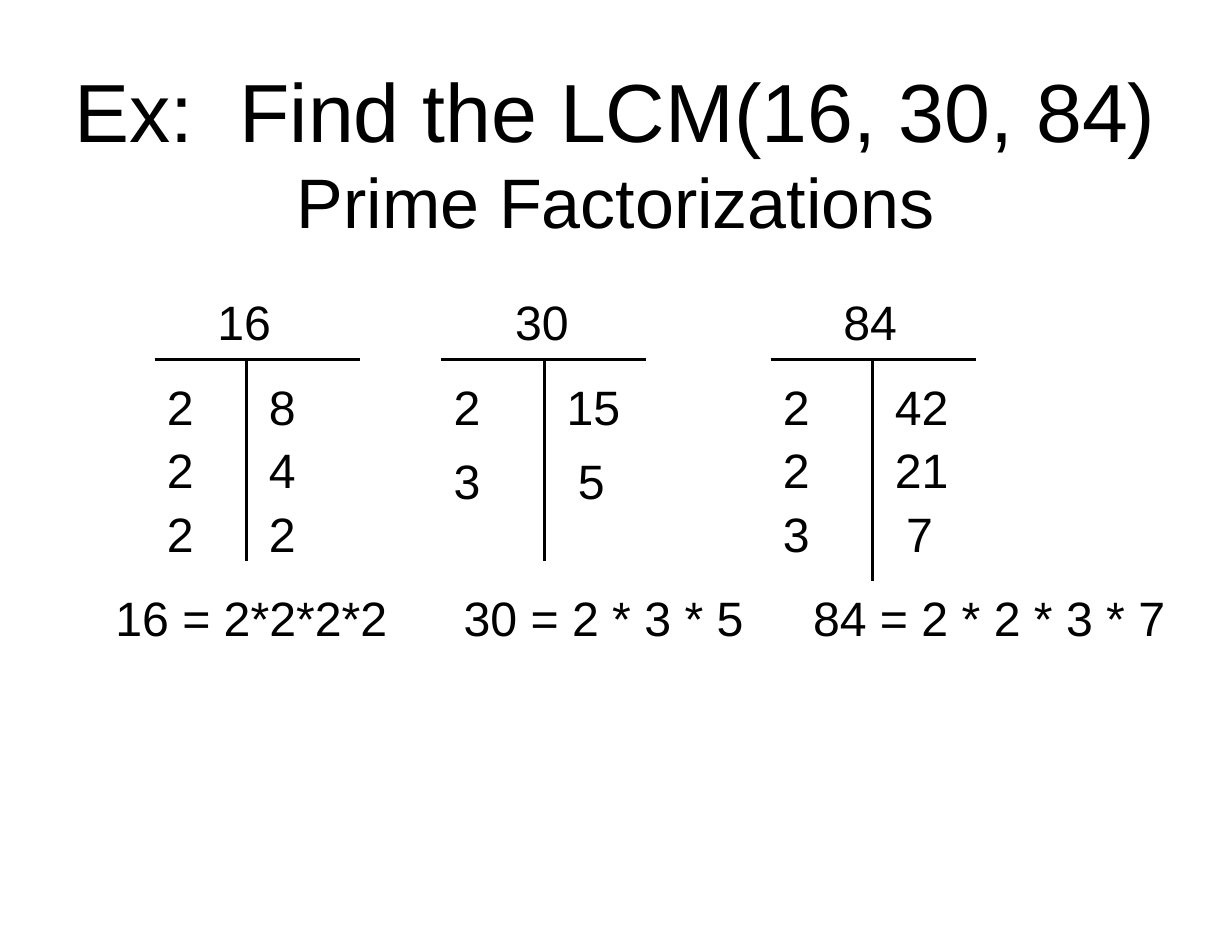
from pptx import Presentation
from pptx.dml.color import RGBColor
from pptx.enum.shapes import MSO_CONNECTOR
from pptx.enum.text import MSO_ANCHOR, PP_ALIGN
from pptx.util import Inches, Pt
from lxml import etree

COLORS = {"ink": "000000", "background": "FFFFFF"}
FONT = "Arial"
DRAWING_NS = "http://schemas.openxmlformats.org/drawingml/2006/main"
ROW_HEIGHT = 0.64

# left and top of the tree, stem offset and length, row step, equation box
TREES = [
    {"number": "16", "box": (1.38, 2.55), "stem": 0.82, "length": 1.8, "step": 0.565,
     "rows": [("2", "8"), ("2", "4"), ("2", "2")],
     "equation": "16 = 2*2*2*2", "equation_box": (0.92, 3.21)},
    {"number": "30", "box": (3.94, 2.55), "stem": 0.92, "length": 1.8, "step": 0.66,
     "rows": [("2", "15"), ("3", "5")],
     "equation": "30 = 2 * 3 * 5", "equation_box": (4.03, 3.21)},
    {"number": "84", "box": (6.88, 2.55), "stem": 0.91, "length": 1.98, "step": 0.565,
     "rows": [("2", "42"), ("2", "21"), ("3", "7")],
     "equation": "84 = 2 * 2 * 3 * 7", "equation_box": (7.15, 3.67)},
]


def add_text(slide, runs, left, top, width, height=ROW_HEIGHT):
    """Add a one-paragraph text box; runs are (text, size) pairs."""
    shape = slide.shapes.add_textbox(Inches(left), Inches(top), Inches(width), Inches(height))
    frame = shape.text_frame
    frame.word_wrap = True
    frame.margin_left = frame.margin_right = Inches(0.11)
    frame.margin_top = frame.margin_bottom = Inches(0.06)
    paragraph = frame.paragraphs[0]
    paragraph.font.name = FONT
    paragraph.font.color.rgb = RGBColor.from_string(COLORS["ink"])
    for text, size in runs:
        run = paragraph.add_run()
        run.text = text
        run.font.size = Pt(size)
    return frame


def add_line(slide, left, top, right, bottom):
    line = slide.shapes.add_connector(
        MSO_CONNECTOR.STRAIGHT, Inches(left), Inches(top), Inches(right), Inches(bottom))
    line.line.color.rgb = RGBColor.from_string(COLORS["ink"])
    line.line.width = Pt(2)
    etree.SubElement(line._element.spPr, f"{{{DRAWING_NS}}}effectLst")


def add_title(slide, left, top, width, height):
    runs = [("Ex:  Find the LCM(16, 30, 84)", 53), (" ", 49), ("Prime Factorizations", 45)]
    frame = add_text(slide, runs, left, top, width, height)
    frame.vertical_anchor = MSO_ANCHOR.MIDDLE
    frame.paragraphs[0].alignment = PP_ALIGN.CENTER


def add_factor_tree(slide, tree):
    left, top = tree["box"]
    stem = left + tree["stem"]
    bar = top + 0.66

    # Number above the bar, with the stem below it
    add_text(slide, [(tree["number"], 31)], stem - 0.37, top, 0.82)
    add_line(slide, left, bar, left + 1.83, bar)
    add_line(slide, stem, bar, stem, bar + tree["length"])

    # Prime factors on the left, quotients on the right
    widest = max(len(quotient) for _, quotient in tree["rows"])
    for index, (factor, quotient) in enumerate(tree["rows"]):
        row_top = bar + 0.1 + index * tree["step"]
        indent = 0.1 * (widest - len(quotient))
        add_text(slide, [(factor, 31)], left, row_top, 0.82)
        add_text(slide, [(quotient, 31)], stem + 0.09 + indent, row_top, 0.82)

    # Factorization below the tree
    equation_left, equation_width = tree["equation_box"]
    add_text(slide, [(tree["equation"], 31)], equation_left, top + 2.64, equation_width)


def main():
    presentation = Presentation()
    presentation.slide_width = Inches(11)
    presentation.slide_height = Inches(8.5)
    slide = presentation.slides.add_slide(presentation.slide_layouts[6])
    slide.background.fill.solid()
    slide.background.fill.fore_color.rgb = RGBColor.from_string(COLORS["background"])

    add_title(slide, 0.55, 0.34, 9.9, 2.02)
    for tree in TREES:
        add_factor_tree(slide, tree)
    presentation.save("out.pptx")


if __name__ == "__main__":
    main()
